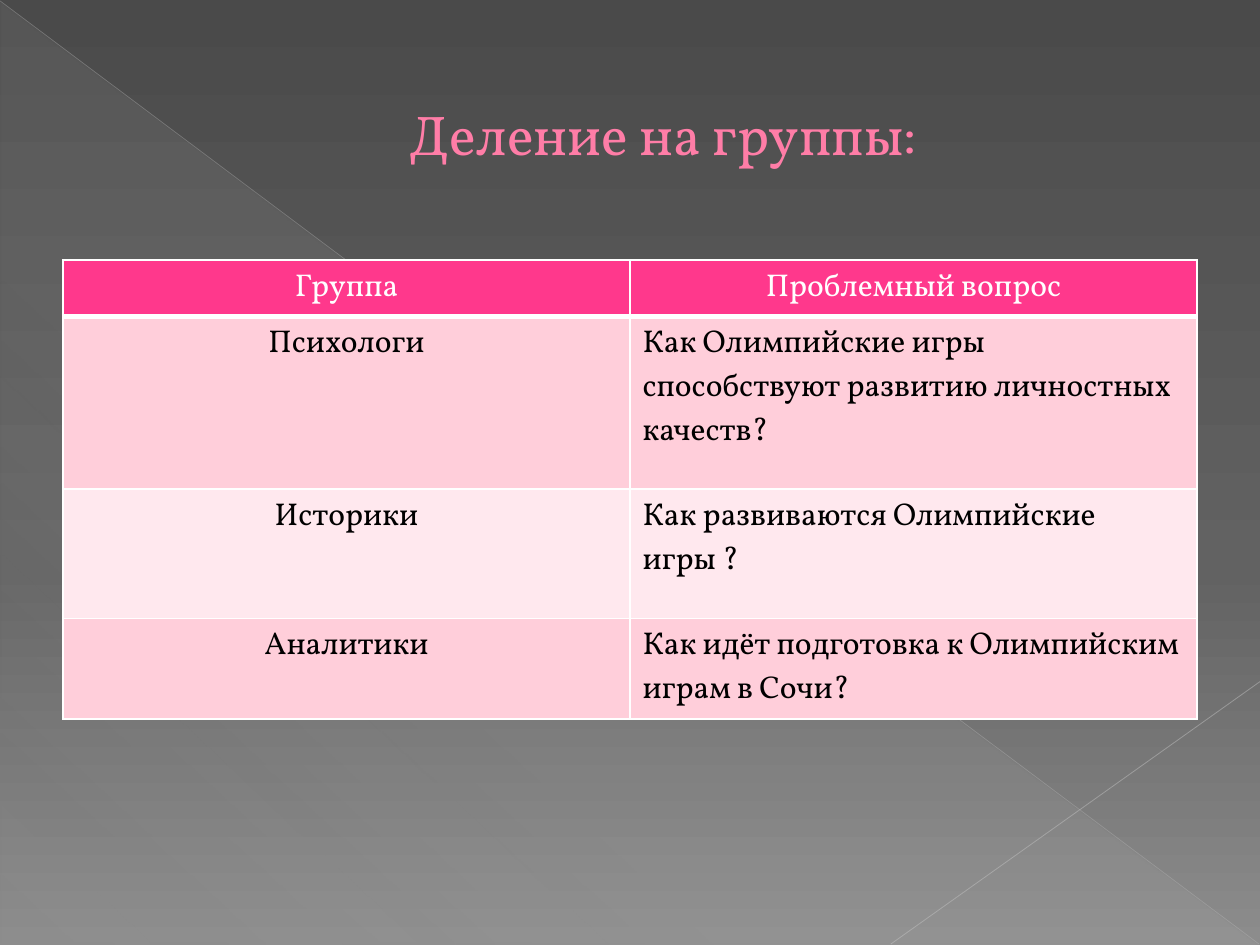
from lxml import etree
from pptx import Presentation, util as u
from pptx.dml.color import RGBColor
from pptx.enum import shapes, text
from pptx.oxml import ns

FONT = "Vollkorn"
WHITE = "FFFFFF"
MID = text.PP_ALIGN.CENTER
LEFT = text.PP_ALIGN.LEFT


def hue(code):
    return RGBColor.from_string(code)


def node(up, tag, **vals):
    item = etree.SubElement(up, ns.qn(tag))
    for key, val in vals.items():
        item.set(key, str(val))
    return item


def tint(up, code, solid=100):
    color = node(up, "a:srgbClr", val=code)
    if solid < 100:
        node(color, "a:alpha", val=solid * 1000)


class Deck:
    """Hold the style and the current slide, and draw each kind of element."""

    def __init__(self, wide, high):
        self.file = Presentation()
        self.file.slide_width, self.file.slide_height = u.Pt(wide), u.Pt(high)
        self.slide = self.file.slides.add_slide(self.file.slide_layouts[6])
        self.items = self.slide.shapes

    def blend(self, fill, host, stops, angle):
        fill.gradient()
        grad = host.find(".//" + ns.qn("a:gradFill"))
        for part in list(grad):
            grad.remove(part)
        group = node(grad, "a:gsLst")
        for pos, code, solid in stops:
            tint(node(group, "a:gs", pos=pos * 1000), code, solid)
        node(grad, "a:lin", ang=angle * 60000, scaled=0)

    def back(self, stops, angle):
        self.blend(self.slide.background.fill, self.slide.element, stops, angle)

    def wedge(self, box, stops, angle):
        kind = shapes.MSO_SHAPE.RIGHT_TRIANGLE
        shape = self.items.add_shape(kind, *map(u.Pt, box))
        shape.shadow.inherit = False
        shape.line.fill.background()
        self.blend(shape.fill, shape.element.spPr, stops, angle)

    def line(self, ends, code, width, solid):
        kind = shapes.MSO_CONNECTOR.STRAIGHT
        link = self.items.add_connector(kind, *map(u.Pt, ends))
        link.line.width = u.Pt(width)
        link.line.color.rgb = hue(code)
        color = link.element.spPr.find(".//" + ns.qn("a:srgbClr"))
        node(color, "a:alpha", val=solid * 1000)
        node(link.element.spPr, "a:effectLst")

    def label(self, frame, words, size, code, align):
        para = frame.paragraphs[0]
        para.alignment = align
        run = para.add_run()
        run.text = words
        style = {"name": FONT, "size": u.Pt(size), "bold": False}
        for key, val in style.items():
            setattr(run.font, key, val)
        run.font.color.rgb = hue(code)

    def title(self, box, words, size, code, indent):
        frame = self.items.add_textbox(*map(u.Pt, box)).text_frame
        style = {
            "word_wrap": True,
            "vertical_anchor": text.MSO_ANCHOR.MIDDLE,
            "margin_left": u.Pt(indent),
        }
        for key, val in style.items():
            setattr(frame, key, val)
        self.label(frame, words, size, code, MID)

    def edge(self, cell, top, base):
        props = cell._tc.get_or_add_tcPr()
        for side, width in zip("LRTB", (1, 1, top, base)):
            rule = node(props, "a:ln" + side, w=u.Pt(width))
            tint(node(rule, "a:solidFill"), WHITE)

    def table(self, box, rows, highs, fills, size):
        frame = self.items.add_table(len(rows), len(rows[0]), *map(u.Pt, box))
        grid = frame.table
        for r, words in enumerate(rows):
            grid.rows[r].height = u.Pt(highs[r])
            for c, word in enumerate(words):
                cell = grid.cell(r, c)
                self.edge(cell, 3 if r == 1 else 1, 3 if r == 0 else 1)
                cell.fill.solid()
                cell.fill.fore_color.rgb = hue(fills[r])
                align = LEFT if r and c else MID
                code = "000000" if r else WHITE
                self.label(cell.text_frame, word, size, code, align)


def main():
    deck = Deck(720, 540)
    deck.back([(0, "4A4A4A", 100), (60, "626262", 100), (100, "8C8C8C", 100)], 90)
    glow = [(0, "D2D2D2", 10), (70, "D2D2D2", 8), (100, "D2D2D2", 1)]
    deck.wedge((0.5, 1.2, 718.8, 538.4), glow, 133)
    deck.line((0, 0.5, 719.5, 539.5), "BFBFBF", 0.39, 35)
    deck.line((720, 389.5, 509, 539.5), "C6C6C6", 0.47, 45)
    deck.title((36, 21, 648, 110), "Деление на группы:", 32, "FF7DA7", 45.4)
    rows = [
        ("Группа", "Проблемный вопрос"),
        ("Психологи", "Как Олимпийские игры способствуют развитию личностных качеств?"),
        ("Историки", "Как развиваются Олимпийские игры ?"),
        ("Аналитики", "Как идёт подготовка к Олимпийским играм в Сочи?"),
    ]
    highs = (32.3, 98.7, 74, 57.4)
    fills = ("FF388C", "FFCEDA", "FFE8EE", "FFCEDA")
    deck.table((36, 148.5, 648, sum(highs)), rows, highs, fills, 18)
    deck.file.save("out.pptx")


if __name__ == "__main__":
    main()
